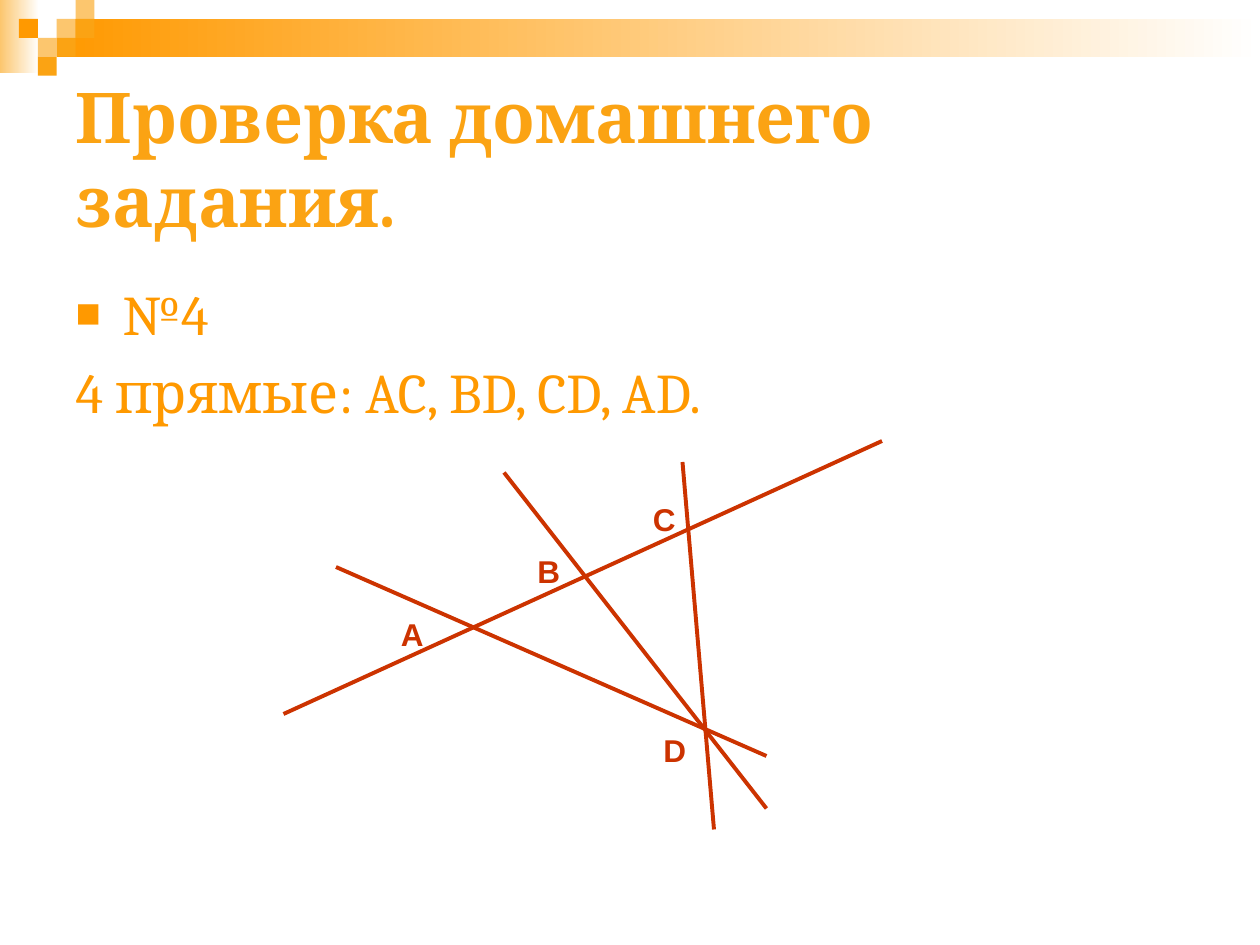
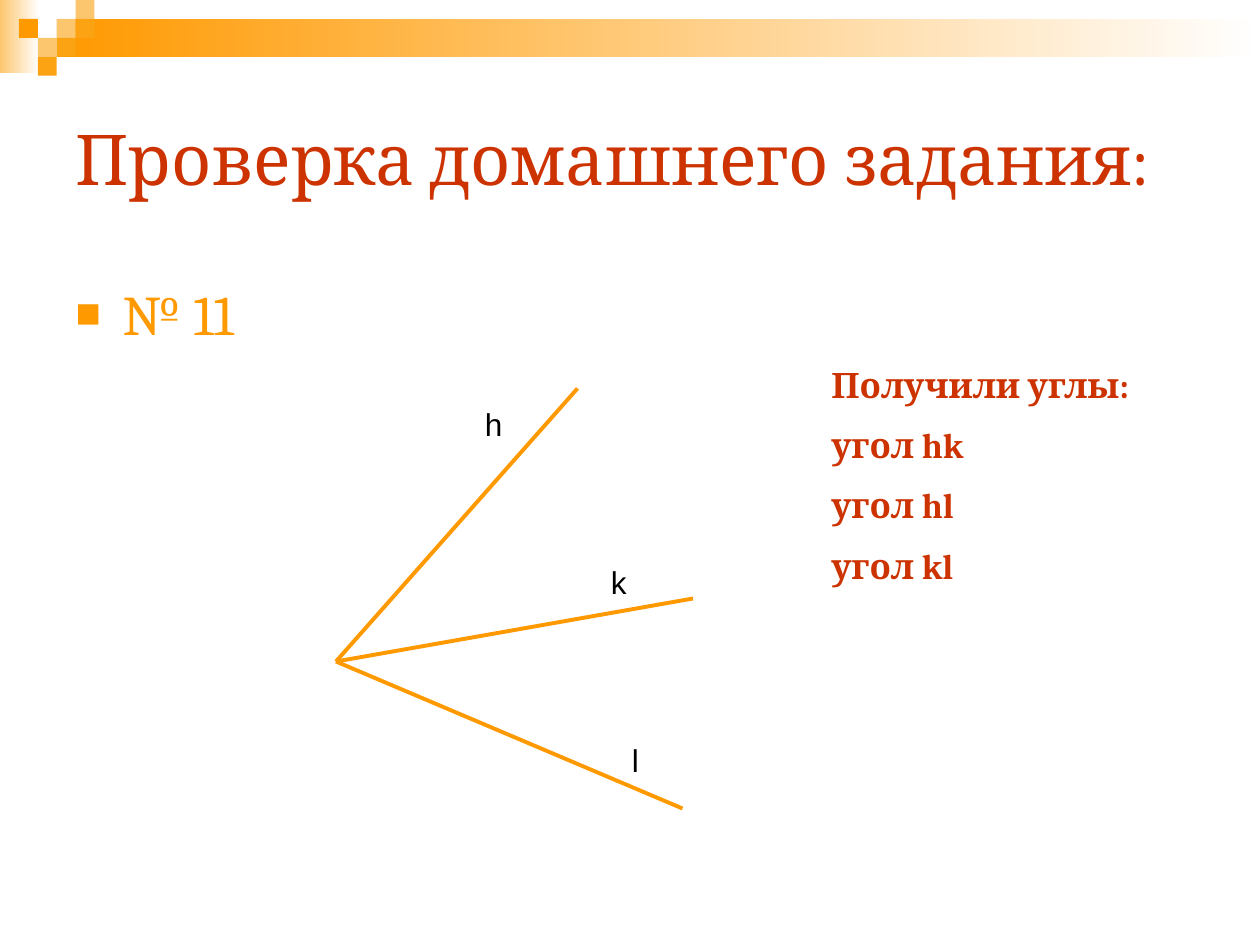
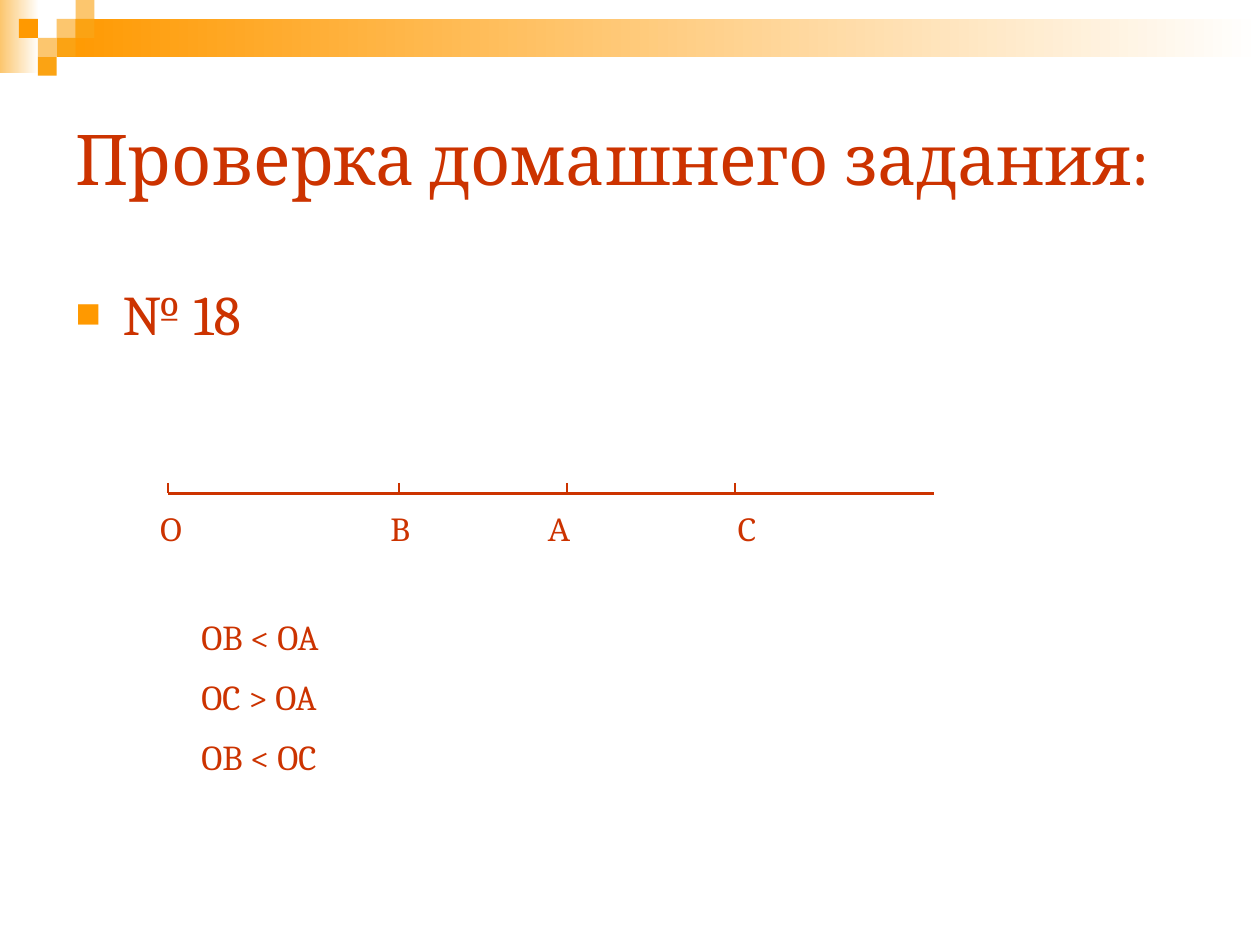
from lxml import etree
from pptx import Presentation
from pptx import util as u
from pptx.dml.color import RGBColor
from pptx.enum import shapes, text
from pptx.oxml import ns

COLORS = {
    "orange": "FF9900",
    "amber": "FBA313",
    "peach": "FCC66E",
    "red": "CC3300",
    "white": "FFFFFF",
    "black": "000000",
}
SERIF, SANS = "Cambria", "Arial"
CELL = 10.8
TITLE_AREA = (36, 36, 648, 108)
BODY_AREA = (36, 156, 648, 306)
LABEL_HEIGHT = 28.8
BAND_CELLS = [
    (3, 1, "peach"), (4, 0, "peach"), (4, 1, "amber"), (2, 2, "peach"),
    (1, 1, "orange"), (3, 2, "amber"), (2, 3, "amber"),
]


def rgb(color):
    return RGBColor.from_string(COLORS[color])


def points(values):
    return [u.Pt(value) for value in values]


def apply(target, values):
    for name, value in values.items():
        setattr(target, name, value)


def style(size, color, name=SERIF, bold=False):
    return {"size": u.Pt(size), "name": name, "bold": bold}, color


def write(frame, lines, look, layout=None):
    values, color = look
    for index, line in enumerate(lines):
        para = frame.add_paragraph() if index else frame.paragraphs[0]
        span = para.add_run()
        span.text = line
        apply(span.font, values)
        span.font.color.rgb = rgb(color)
        apply(para, layout or {})


def add_rectangle(page, area, color, fade=False):
    box = page.shapes.add_shape(shapes.MSO_SHAPE.RECTANGLE, *points(area))
    box.shadow.inherit = False
    box.line.fill.background()
    if fade:
        box.fill.gradient()
        box.fill.gradient_angle = 0
        for stop, shade, position in zip(box.fill.gradient_stops, (color, "white"), (0, 1)):
            stop.color.rgb = rgb(shade)
            stop.position = position
    else:
        box.fill.solid()
        box.fill.fore_color.rgb = rgb(color)
    return box


def add_band(deck, page):
    boxes = [
        add_rectangle(page, (0, 0, 22.3, 42), "peach", fade=True),
        add_rectangle(page, (3 * CELL, CELL, 720 - 3 * CELL, 2 * CELL), "orange", fade=True),
    ]
    for column, row, color in BAND_CELLS:
        boxes.append(add_rectangle(page, (column * CELL, row * CELL, CELL, CELL), color))
    for box in boxes:
        deck.slide_master.element.cSld.spTree.append(box.element)


def set_bullet(para, shown):
    props = para._p.get_or_add_pPr()
    if not shown:
        etree.SubElement(props, ns.qn("a:buNone"))
        return
    color = etree.SubElement(props, ns.qn("a:buClr"))
    etree.SubElement(color, ns.qn("a:srgbClr"), val=COLORS["orange"])
    etree.SubElement(props, ns.qn("a:buSzPct"), val="75000")
    etree.SubElement(props, ns.qn("a:buFont"), typeface=SANS)
    etree.SubElement(props, ns.qn("a:buChar"), char="■")


def fill_placeholder(holder, area, lines, look, anchor):
    apply(holder, dict(zip(("left", "top", "width", "height"), points(area))))
    frame = holder.text_frame
    apply(frame, {"word_wrap": True, "auto_size": text.MSO_AUTO_SIZE.NONE,
                  "vertical_anchor": anchor})
    write(frame, lines, look, {"alignment": text.PP_ALIGN.LEFT})
    return frame


def add_page(deck, title, title_look, lines, body_color):
    page = deck.slides.add_slide(deck.slide_layouts[1])
    fill_placeholder(page.shapes.title, TITLE_AREA, [title], title_look,
                     text.MSO_ANCHOR.MIDDLE)
    frame = fill_placeholder(page.placeholders[1], BODY_AREA, lines,
                             style(32, body_color), text.MSO_ANCHOR.TOP)
    for index, para in enumerate(frame.paragraphs):
        set_bullet(para, index == 0)
    return page


def add_line(page, start, end, color, width=2.25):
    line = page.shapes.add_connector(shapes.MSO_CONNECTOR.STRAIGHT, *points(start + end))
    line.line.color.rgb = rgb(color)
    line.line.width = u.Pt(width)
    etree.SubElement(line.element.spPr, ns.qn("a:effectLst"))


def add_text(page, area, lines, look):
    box = page.shapes.add_textbox(*points(area))
    frame = box.text_frame
    apply(frame, {"word_wrap": True, "auto_size": text.MSO_AUTO_SIZE.SHAPE_TO_FIT_TEXT})
    write(frame, lines, look)
    for para in frame.paragraphs[1:]:
        para.space_before = u.Pt(10.5)


def add_labels(page, labels, look):
    for label, left, top, width in labels:
        add_text(page, (left, top, width, LABEL_HEIGHT), [label], look)


def add_crossing_lines(deck):
    page = add_page(deck, "Проверка домашнего задания.", style(40, "amber", bold=True),
                    ["№4", "4 прямые: AC, BD, CD, AD."], "orange")
    for start, end in [((192, 324), (438, 432)), ((390, 264), (408, 474)),
                       ((288, 270), (438, 462)), ((162, 408), (504, 252))]:
        add_line(page, start, end, "red")
    add_labels(page, [("A", 222, 348, 60), ("B", 300, 312, 36),
                      ("C", 366, 282, 30), ("D", 372, 414, 36)],
               style(18, "red", SANS, True))
    return page


def add_angles(deck, title):
    page = add_page(deck, title, style(40, "red"), ["№ 11"], "orange")
    vertex = (192, 378)
    for end in [(330, 222), (396, 342), (390, 462)]:
        add_line(page, vertex, end, "orange")
    add_labels(page, [("h", 270, 228, 36), ("k", 342, 318, 36), ("l", 354, 420, 30)],
               style(18, "black", SANS))
    add_text(page, (468, 204, 192, 139),
             ["Получили углы:", "угол hk", "угол hl", "угол kl"],
             style(20, "red", bold=True))


def add_ray(deck, title):
    page = add_page(deck, title, style(40, "red"), ["№ 18"], "red")
    ray_top = 282
    add_line(page, (96, ray_top), (534, ray_top), "red")
    for left in (96, 228, 324, 420):
        add_line(page, (left, ray_top - 6), (left, ray_top), "red", 0.75)
    add_labels(page, [("О", 84, 288, 48), ("В", 216, 288, 30),
                      ("А", 306, 288, 48), ("С", 414, 288, 30)], style(18, "red"))
    add_text(page, (108, 348, 198, 103), ["OB < OA", "OC > OA", "OB < OC"],
             style(20, "red"))


def main():
    deck = Presentation()
    deck.slide_width, deck.slide_height = points((720, 540))
    title = "Проверка домашнего задания:"
    add_band(deck, add_crossing_lines(deck))
    add_angles(deck, title)
    add_ray(deck, title)
    deck.save("out.pptx")


if __name__ == "__main__":
    main()
